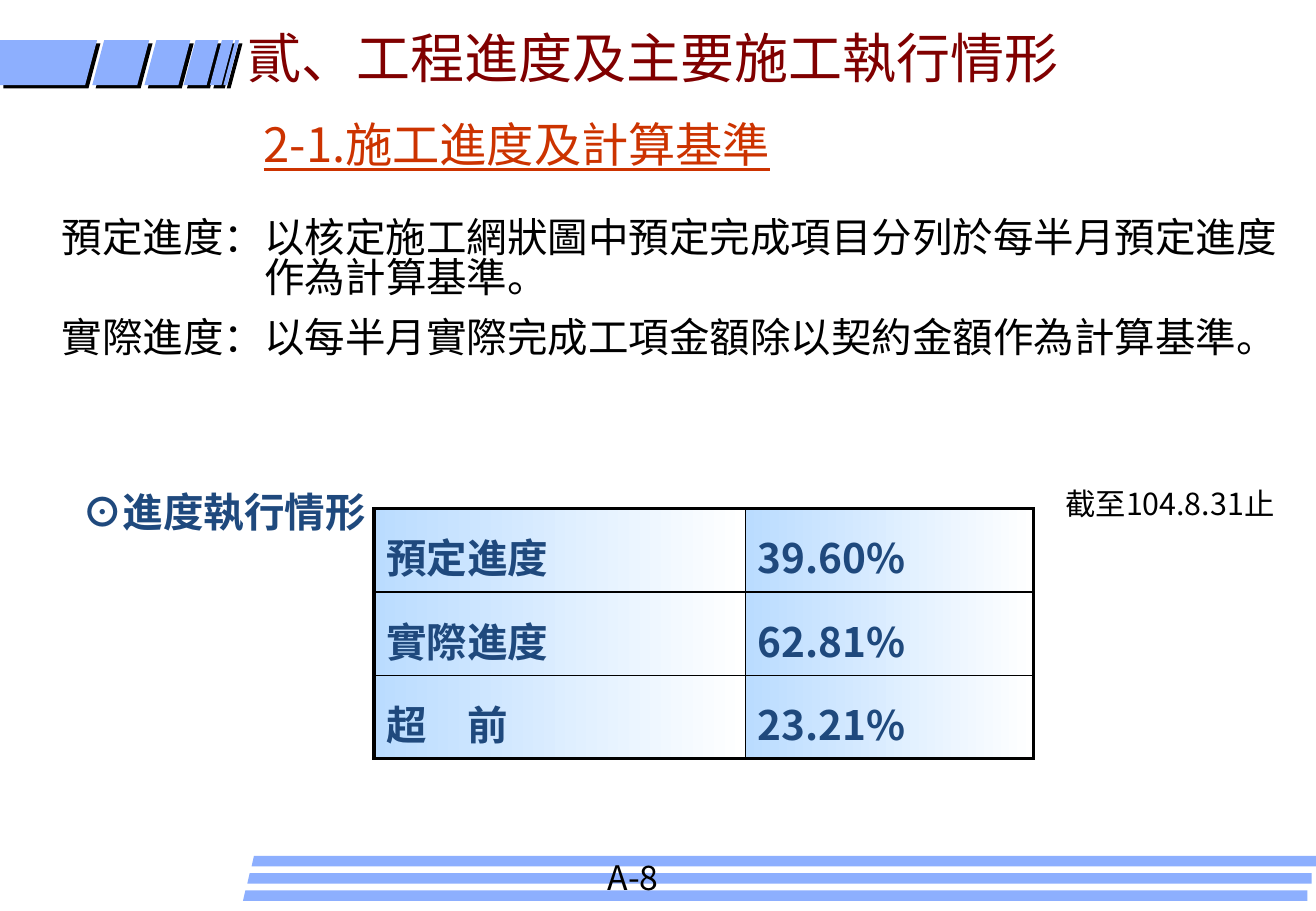
from lxml import etree
from pptx import Presentation, util as u
from pptx.dml.color import RGBColor
from pptx.enum import text
from pptx.oxml import parse_xml
from pptx.oxml.ns import qn

COLORS = {"band": "8DAFFE", "black": "000000", "heading": "800000",
          "subheading": "CC3300", "navy": "1F497D", "pale": "BADCFF",
          "white": "FFFFFF"}
DRAWING_NS = "http://schemas.openxmlformats.org/drawingml/2006/main"


class SlideBuilder:
    """Hold the slide and its style, and add each kind of element."""

    font = "Noto Sans CJK SC"

    def __init__(self, slide):
        self.slide = slide

    def color(self, name):
        return RGBColor.from_string(COLORS[name])

    def add_run(self, paragraph, content, size, color, bold=False, underline=False):
        run = paragraph.add_run()
        run.text = content
        font = run.font
        font.name, font.size = self.font, u.Pt(size)
        font.bold, font.underline = bold, underline
        font.color.rgb = self.color(color)
        east_asian = etree.Element(qn("a:ea"), typeface=self.font)
        run._r.rPr.find(qn("a:latin")).addnext(east_asian)

    def fill_text(self, shape, box, paragraphs, size, color, spacing=0.88,
                  hanging=0, **style):
        shape.left, shape.top, shape.width, shape.height = map(u.Cm, box)
        frame = shape.text_frame
        frame.word_wrap = True
        frame.auto_size = text.MSO_AUTO_SIZE.NONE
        frame.vertical_anchor = text.MSO_ANCHOR.TOP
        for index, content in enumerate(paragraphs):
            paragraph = frame.add_paragraph() if index else frame.paragraphs[0]
            paragraph.alignment = text.PP_ALIGN.LEFT
            paragraph.line_spacing = spacing
            paragraph.space_before = u.Pt(size / 2 if index else 0)
            if hanging:
                properties = paragraph._p.get_or_add_pPr()
                properties.set("marL", str(u.Cm(hanging)))
                properties.set("indent", str(-u.Cm(hanging)))
            self.add_run(paragraph, content, size, color, **style)

    def title(self, box, content, size, color):
        self.fill_text(self.slide.shapes.title, box, [content], size, color)

    def text_box(self, box, paragraphs, size, color, **style):
        shape = self.slide.shapes.add_textbox(0, 0, 0, 0)
        self.fill_text(shape, box, paragraphs, size, color, **style)

    def polygon(self, points, shadow=False):
        start, *rest = [(u.Cm(x), u.Cm(y)) for x, y in points]
        builder = self.slide.shapes.build_freeform(*start)
        builder.add_line_segments(rest, close=True)
        shape = builder.convert_to_shape()
        shape.fill.solid()
        shape.fill.fore_color.rgb = self.color("band")
        shape.line.fill.background()
        shape.shadow.inherit = False
        if shadow:
            effects = shape._element.spPr.find(qn("a:effectLst"))
            effects.append(parse_xml(
                f'<a:outerShdw xmlns:a="{DRAWING_NS}" dist="{u.Pt(2.8)}" '
                f'dir="2700000" algn="ctr" rotWithShape="0">'
                f'<a:srgbClr val="{COLORS["black"]}"/></a:outerShdw>'))

    def border(self, cell, side, width):
        cell._tc.get_or_add_tcPr().append(parse_xml(
            f'<a:{side} xmlns:a="{DRAWING_NS}" w="{u.Pt(width)}"><a:solidFill>'
            f'<a:srgbClr val="{COLORS["black"]}"/></a:solidFill></a:{side}>'))

    def table(self, left, top, widths, row_height, rows):
        shape = self.slide.shapes.add_table(
            len(rows), len(widths), u.Cm(left), u.Cm(top),
            u.Cm(sum(widths)), u.Cm(row_height * len(rows)))
        table = shape.table
        table.first_row = table.horz_banding = False
        for column, width in zip(table.columns, widths):
            column.width = u.Cm(width)
        for r, values in enumerate(rows):
            table.rows[r].height = u.Cm(row_height)
            for c, value in enumerate(values):
                cell = table.cell(r, c)
                cell.vertical_anchor = text.MSO_ANCHOR.MIDDLE
                outer = {"lnL": c == 0, "lnR": c == len(widths) - 1,
                         "lnT": r == 0, "lnB": r == len(rows) - 1}
                for side, is_outer in outer.items():
                    self.border(cell, side, 2.25 if is_outer else 1)
                cell.fill.gradient()
                cell.fill.gradient_angle = 0
                for stop, name in zip(cell.fill.gradient_stops, ("pale", "white")):
                    stop.color.rgb = self.color(name)
                paragraph = cell.text_frame.paragraphs[0]
                paragraph.line_spacing = 1.2
                self.add_run(paragraph, value, 24, "navy", bold=True)


def main():
    presentation = Presentation()
    presentation.slide_width, presentation.slide_height = u.Cm(27.51), u.Cm(19.05)
    builder = SlideBuilder(presentation.slides.add_slide(presentation.slide_layouts[5]))

    for index in range(3):
        left, top = 5.08 + 0.09 * index, 18.62 - 0.36 * index
        right, bottom = left + 22.25, top + 0.22
        builder.polygon([(left, bottom), (right, bottom), (right, top),
                         (left + 0.05, top)])

    top, bottom, slant = 0.84, 1.78, 0.25
    blocks = [(0, 1.78), (1.93, 0.94), (3.02, 0.71), (3.84, 0.48),
              (4.39, 0.24), (4.67, 0.08)]
    for left, width in blocks:
        top_left = left + slant if left else 0
        builder.polygon([(top_left, top), (left, bottom), (left + width, bottom),
                         (left + width + slant, top)], shadow=True)

    builder.title((4.93, 0.56, 22.23, 2.24), "貳、工程進度及主要施工執行情形", 32, "heading")
    builder.text_box((5.26, 2.44, 12.17, 1.65), ["2-1.施工進度及計算基準"],
                     28, "subheading", underline=True)
    builder.text_box((1.04, 4.5, 26.11, 3.84), [
        "預定進度：以核定施工網狀圖中預定完成項目分列於每半月預定進度作為計算基準。",
        "實際進度：以每半月實際完成工項金額除以契約金額作為計算基準。",
    ], 24, "black", spacing=0.82, hanging=4.24)
    builder.table(7.82, 10.64, (7.77, 6.02), 1.74, [
        ("預定進度", "39.60%"), ("實際進度", "62.81%"), ("超　前", "23.21%")])
    builder.text_box((22.02, 10.13, 5.51, 1.02), ["截至104.8.31止"], 18, "black")
    builder.text_box((1.47, 10.19, 6.73, 1.27), ["⊙進度執行情形"], 24, "navy", bold=True)
    builder.text_box((12.45, 17.91, 3.07, 1.12), ["A-8"], 20, "black")
    presentation.save("out.pptx")


if __name__ == "__main__":
    main()
